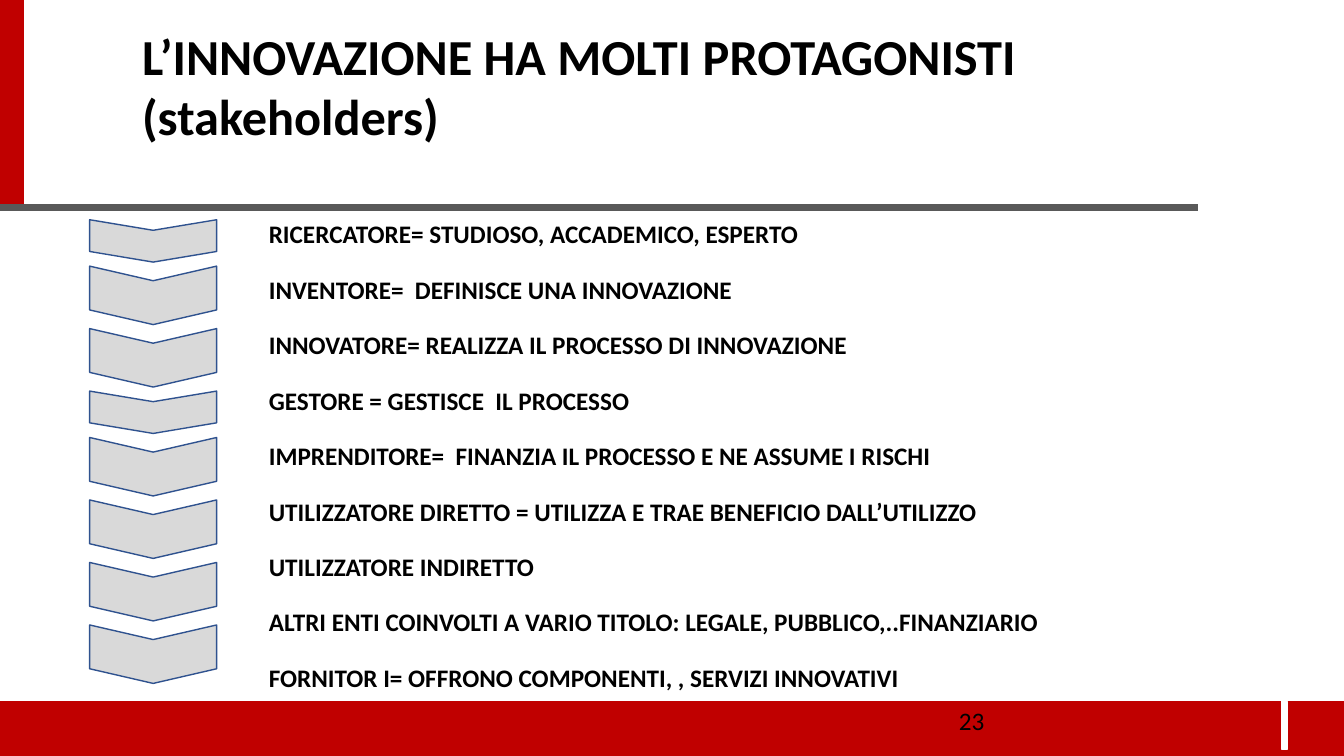
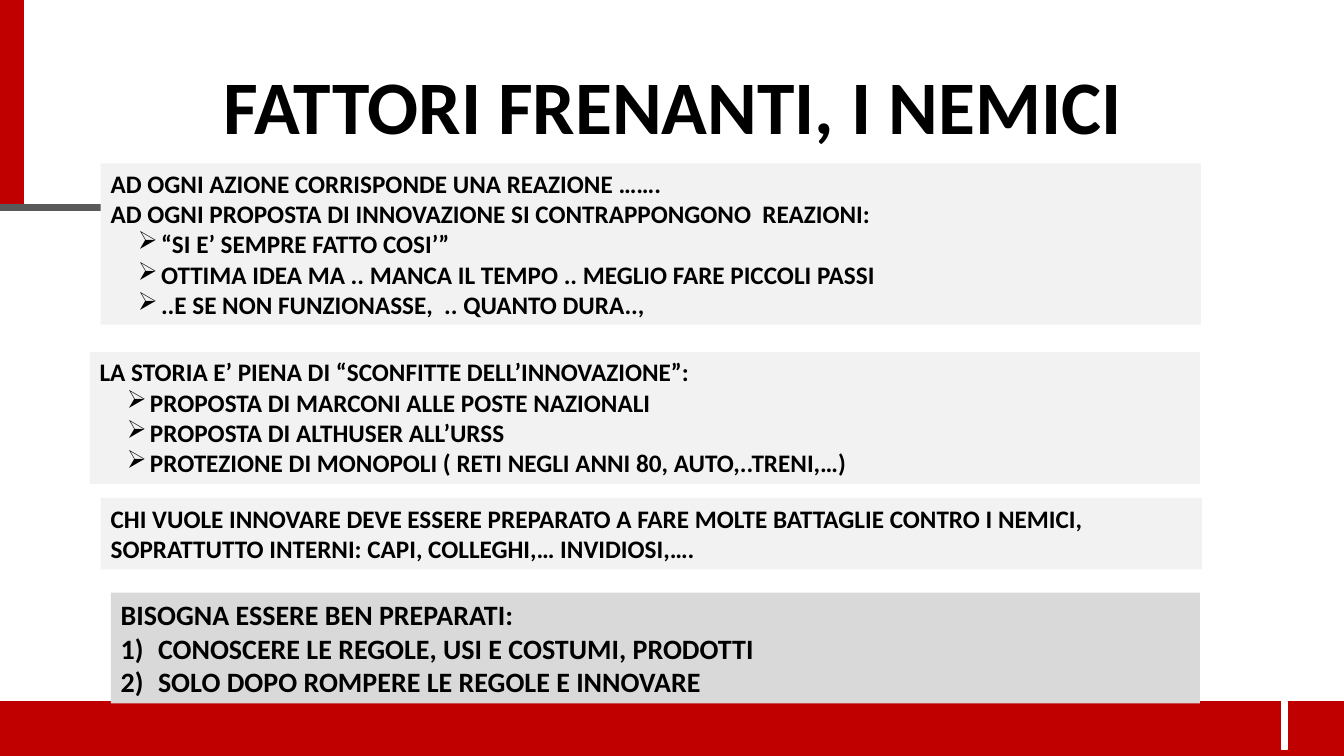
from lxml import etree
from pptx import Presentation, util as u
from pptx.dml.color import RGBColor
from pptx.enum import shapes, text
from pptx.oxml.ns import qn

PX = 9144  # EMU per px, 100 px to the inch
COLORS = {"red": "C00000", "rule": "595959", "white": "FFFFFF", "ink": "000000",
          "pale": "F2F2F2", "grey": "D9D9D9", "outline": "2F528F"}
COLORS = {name: RGBColor.from_string(value) for name, value in COLORS.items()}
FRAME = {"word_wrap": True, "auto_size": text.MSO_AUTO_SIZE.NONE}
ARROW = ("buChar", {"char": "➢"}, 50, 23)
NUMBER = ("buAutoNum", {"type": "arabicParenR"}, 37, 37)


def write(shape, lines, size, bold=True, before=0, anchor=text.MSO_ANCHOR.TOP):
    """Fill a shape with left-aligned lines; each is a string or a (string, bullet) pair."""
    frame = shape.text_frame
    for name, value in {**FRAME, "vertical_anchor": anchor}.items():
        setattr(frame, name, value)
    for index, line in enumerate(lines):
        words, bullet = (line, None) if isinstance(line, str) else line
        para = frame.add_paragraph() if index else frame.paragraphs[0]
        para.alignment = text.PP_ALIGN.LEFT
        para.space_before = u.Pt(before if index else 0)
        if bullet:
            tag, attributes, margin, hanging = bullet
            props = para._p.get_or_add_pPr()
            props.set("marL", str(margin * PX))
            props.set("indent", str(-hanging * PX))
            etree.SubElement(props, qn("a:" + tag), attributes)
        span = para.add_run()
        span.text = words
        for name, value in {"name": "Calibri", "size": u.Pt(size), "bold": bold}.items():
            setattr(span.font, name, value)
        span.font.color.rgb = COLORS["ink"]


def add_block(page, kind, area, fill, line=None):
    """Add a preset shape with a flat fill and an optional 1 pt outline."""
    block = page.shapes.add_shape(kind, *(n * PX for n in area))
    block.shadow.inherit = False
    block.fill.solid()
    block.fill.fore_color.rgb = COLORS[fill]
    if line:
        block.line.color.rgb = COLORS[line]
        block.line.width = u.Pt(1)
    else:
        block.line.fill.background()
    return block


deck = Presentation()
deck.slide_width, deck.slide_height = 1334 * PX, 750 * PX
RECT = shapes.MSO_SHAPE.RECTANGLE

# Shared bands, rules and titles
titles = [
    ("L’INNOVAZIONE HA MOLTI PROTAGONISTI (stakeholders)", 36, (131, 39, 1049, 91)),
    ("FATTORI FRENANTI, I NEMICI", 54, (212, 0, 1121, 206)),
]
pages = []
for words, size, area in titles:
    page = deck.slides.add_slide(deck.slide_layouts[5])
    pages.append(page)
    add_block(page, RECT, (0, 696, 1334, 54), "red", "red")
    add_block(page, RECT, (1272, 696, 6, 47), "white", "white")
    for ends, color, width in [((12, 0, 12, 206), "red", 17.25),
                               ((0, 206, 1189, 206), "rule", 5.5)]:
        rule = page.shapes.add_connector(shapes.MSO_CONNECTOR.STRAIGHT, *(n * PX for n in ends))
        rule.line.color.rgb = COLORS[color]
        rule.line.width = u.Pt(width)
        etree.SubElement(rule._element.spPr, qn("a:effectLst"))
    title = page.shapes.title
    for name, value in zip(("left", "top", "width", "height"), area):
        setattr(title, name, value * PX)
    write(title, [words], size, anchor=text.MSO_ANCHOR.MIDDLE)
actors, enemies = pages

# Slide 1: the people involved in innovation
roles = actors.shapes.add_textbox(*(n * PX for n in (257, 212, 976, 480)))
write(roles, [
    "RICERCATORE= STUDIOSO, ACCADEMICO, ESPERTO",
    "INVENTORE=  DEFINISCE UNA INNOVAZIONE",
    "INNOVATORE= REALIZZA IL PROCESSO DI INNOVAZIONE",
    "GESTORE = GESTISCE  IL PROCESSO",
    "IMPRENDITORE=  FINANZIA IL PROCESSO E NE ASSUME I RISCHI",
    "UTILIZZATORE DIRETTO = UTILIZZA E TRAE BENEFICIO DALL’UTILIZZO",
    "UTILIZZATORE INDIRETTO",
    "ALTRI ENTI COINVOLTI A VARIO TITOLO: LEGALE, PUBBLICO,..FINANZIARIO",
    "FORNITOR I= OFFRONO COMPONENTI, , SERVIZI INNOVATIVI",
], 18, before=18)

top, span_width, center, gap = 218, 126, 152, 4
for depth in (42, 58, 58, 42, 58, 58, 58, 58):
    # Turned a quarter, so depth is the width before rotation
    area = (center - depth // 2, top + depth // 2 - span_width // 2, depth, span_width)
    chevron = add_block(actors, shapes.MSO_SHAPE.CHEVRON, area, "grey", "outline")
    chevron.adjustments[0] = 0.25
    chevron.rotation = 90
    top += depth + gap

number = actors.shapes.add_textbox(*(n * PX for n in (942, 695, 300, 40)))
write(number, ["23"], 18, bold=False)

# Slide 2: what holds innovation back
boxes = [
    ((100, 162, 1092, 160), "pale", 18, [
        "AD OGNI AZIONE CORRISPONDE UNA REAZIONE …….",
        "AD OGNI PROPOSTA DI INNOVAZIONE SI CONTRAPPONGONO  REAZIONI:",
        ("“SI E’ SEMPRE FATTO COSI’”", ARROW),
        ("OTTIMA IDEA MA .. MANCA IL TEMPO .. MEGLIO FARE PICCOLI PASSI", ARROW),
        ("..E SE NON FUNZIONASSE,  .. QUANTO DURA..,", ARROW),
    ]),
    ((89, 349, 1102, 131), "pale", 18, [
        "LA STORIA E’ PIENA DI “SCONFITTE DELL’INNOVAZIONE”:",
        ("PROPOSTA DI MARCONI ALLE POSTE NAZIONALI", ARROW),
        ("PROPOSTA DI ALTHUSER ALL’URSS", ARROW),
        ("PROTEZIONE DI MONOPOLI ( RETI NEGLI ANNI 80, AUTO,..TRENI,…)", ARROW),
    ]),
    ((100, 494, 1093, 71), "pale", 18, [
        "CHI VUOLE INNOVARE DEVE ESSERE PREPARATO A FARE MOLTE BATTAGLIE CONTRO I NEMICI, "
        "SOPRATTUTTO INTERNI: CAPI, COLLEGHI,… INVIDIOSI,….",
    ]),
    ((110, 588, 1081, 110), "grey", 20, [
        "BISOGNA ESSERE BEN PREPARATI:",
        ("CONOSCERE LE REGOLE, USI E COSTUMI, PRODOTTI", NUMBER),
        ("SOLO DOPO ROMPERE LE REGOLE E INNOVARE", NUMBER),
    ]),
]
for area, fill, size, lines in boxes:
    write(add_block(enemies, RECT, area, fill), lines, size)

deck.save("out.pptx")
